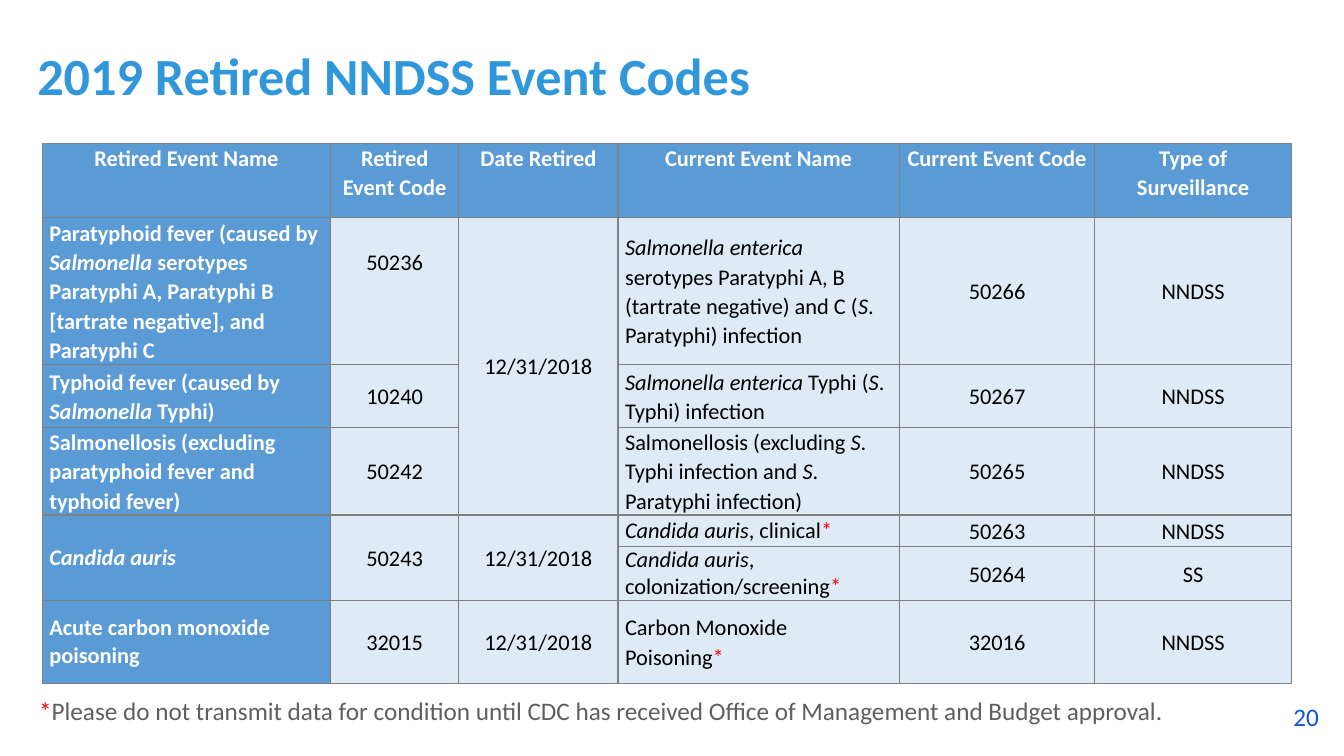
from pptx import Presentation
from pptx.dml.color import RGBColor
from pptx.enum.text import MSO_ANCHOR, MSO_AUTO_SIZE, PP_ALIGN
from pptx.oxml import parse_xml
from pptx.oxml.ns import nsdecls
from pptx.util import Pt

PX = 9144  # 100 px to the inch
LEFT, CENTER, RIGHT = PP_ALIGN.LEFT, PP_ALIGN.CENTER, PP_ALIGN.RIGHT
TOP, MIDDLE, BOTTOM = MSO_ANCHOR.TOP, MSO_ANCHOR.MIDDLE, MSO_ANCHOR.BOTTOM
NO_FIT = MSO_AUTO_SIZE.NONE

FONT = "Calibri"
WHITE, BLACK, RED, GRAY = "FFFFFF", "000000", "FF0000", "5F5F5F"
TITLE_BLUE, NUMBER_BLUE = "2F97DA", "0F56DC"
HEAD_BLUE, PALE_BLUE, BORDER = "5B9BD5", "DEEBF7", "808080"

COLUMN_WIDTHS = [286, 127, 158, 279, 194, 195]
ROW_HEIGHTS = [74, 146, 62, 87, 31, 54, 82]
NAME_COLUMNS = (0, 3)

# Underscores enclose italics; None continues the cell above.
EVENTS = [
    ["Retired Event Name", "Retired Event Code", "Date Retired",
     "Current Event Name", "Current Event Code", "Type of Surveillance"],
    ["Paratyphoid fever (caused by _Salmonella_ serotypes Paratyphi A, "
     "Paratyphi B [tartrate negative], and Paratyphi C", "50236", "\u00a012/31/2018".strip(),
     "_Salmonella enterica_ serotypes Paratyphi A, B (tartrate negative) "
     "and C (_S_. Paratyphi) infection", "50266", "NNDSS"],
    ["Typhoid fever (caused by _Salmonella_ Typhi)", "10240", None,
     "_Salmonella enterica_ Typhi (_S_. Typhi) infection", "50267", "NNDSS"],
    ["Salmonellosis (excluding paratyphoid fever and typhoid fever)", "50242", None,
     "Salmonellosis (excluding _S_. Typhi infection and _S_. Paratyphi infection)",
     "50265", "NNDSS"],
    ["_Candida auris_", "50243", "12/31/2018",
     "_Candida auris_, clinical*", "50263", "NNDSS"],
    [None, None, None,
     "_Candida auris_, colonization/screening*", "50264", "SS"],
    ["Acute carbon monoxide poisoning", "32015", "12/31/2018",
     "Carbon Monoxide Poisoning*", "32016", "NNDSS"],
]
SINGLE_SPACED = {(4, 0), (6, 0), (4, 3), (5, 3)}
EXTRA_MARGINS = {(1, 1): {"margin_bottom": 58 * PX}, (6, 3): {"margin_right": 20 * PX}}


def rgb(color):
    return RGBColor.from_string(color)


def apply(target, values):
    for name, value in values.items():
        setattr(target, name, value)


def write(para, text, size, color, bold=False):
    """Add spans: underscores toggle italics and asterisks turn red."""
    for index, part in enumerate(text.split("_")):
        for piece in filter(None, part.partition("*")):
            span = para.add_run()
            span.text = piece
            apply(span.font, {"name": FONT, "size": Pt(size), "bold": bold,
                              "italic": index % 2 == 1})
            span.font.color.rgb = rgb(RED if piece == "*" else color)


def place(shape, box):
    apply(shape, dict(zip(("left", "top", "width", "height"), (n * PX for n in box))))


def add_title(page, box, text):
    title = page.shapes.title
    place(title, box)
    apply(title.text_frame, {"word_wrap": True, "auto_size": NO_FIT,
                             "vertical_anchor": BOTTOM})
    para = title.text_frame.paragraphs[0]
    apply(para, {"alignment": LEFT, "line_spacing": Pt(40)})
    write(para, text, 37.3, TITLE_BLUE, bold=True)


def add_line_of_text(page, box, text, color, align=LEFT, indent=0):
    frame = page.shapes.add_textbox(*(n * PX for n in box)).text_frame
    frame.word_wrap = True
    para = frame.paragraphs[0]
    para.alignment = align
    if indent:
        para._p.get_or_add_pPr().set("marL", str(indent * PX))
    write(para, text, 18, color)


def add_borders(cell):
    properties = cell._tc.get_or_add_tcPr()
    for side in ("lnL", "lnR", "lnT", "lnB"):
        properties.append(parse_xml(
            f'<a:{side} {nsdecls("a")} w="{Pt(1)}"><a:solidFill>'
            f'<a:srgbClr val="{BORDER}"/></a:solidFill></a:{side}>'))


def format_cell(cell, row, column, text):
    is_head = row == 0 or column == 0
    add_borders(cell)
    cell.fill.solid()
    cell.fill.fore_color.rgb = rgb(HEAD_BLUE if is_head else PALE_BLUE)
    margins = {"margin_left": 7 * PX, "margin_right": 7 * PX,
               "margin_top": 0, "margin_bottom": 0}
    apply(cell, margins | EXTRA_MARGINS.get((row, column), {}))
    cell.vertical_anchor = MIDDLE if row else TOP
    if text is None:
        return
    para = cell.text_frame.paragraphs[0]
    para.alignment = LEFT if row and column in NAME_COLUMNS else CENTER
    para.line_spacing = 1.0 if (row, column) in SINGLE_SPACED else 1.07
    write(para, text, 16, WHITE if is_head else BLACK, bold=is_head)


def add_event_table(page, left, top):
    box = (left, top, sum(COLUMN_WIDTHS), sum(ROW_HEIGHTS))
    table = page.shapes.add_table(len(ROW_HEIGHTS), len(COLUMN_WIDTHS),
                                  *(n * PX for n in box)).table
    apply(table, {"first_row": False, "horz_banding": False})
    for column, width in zip(table.columns, COLUMN_WIDTHS):
        column.width = width * PX
    for row, height in zip(table.rows, ROW_HEIGHTS):
        row.height = height * PX
    for row, texts in enumerate(EVENTS):
        for column, text in enumerate(texts):
            format_cell(table.cell(row, column), row, column, text)
    for column in range(len(COLUMN_WIDTHS)):
        starts = [row for row, texts in enumerate(EVENTS) if texts[column] is not None]
        for start, following in zip(starts, starts[1:] + [len(EVENTS)]):
            if following - start > 1:
                table.cell(start, column).merge(table.cell(following - 1, column))


def main():
    deck = Presentation()
    apply(deck, {"slide_width": 1333 * PX, "slide_height": 750 * PX})
    page = deck.slides.add_slide(deck.slide_layouts[5])
    add_line_of_text(page, (1192, 691, 126, 40), "20", NUMBER_BLUE, align=RIGHT)
    add_title(page, (27, 41, 1200, 69), "2019 Retired NNDSS Event Codes")
    add_event_table(page, 42, 142)
    add_line_of_text(
        page, (27, 685, 1183, 40),
        "*Please do not transmit data for condition until CDC has received "
        "Office of Management and Budget approval.", GRAY, indent=2)
    deck.save("out.pptx")


if __name__ == "__main__":
    main()
